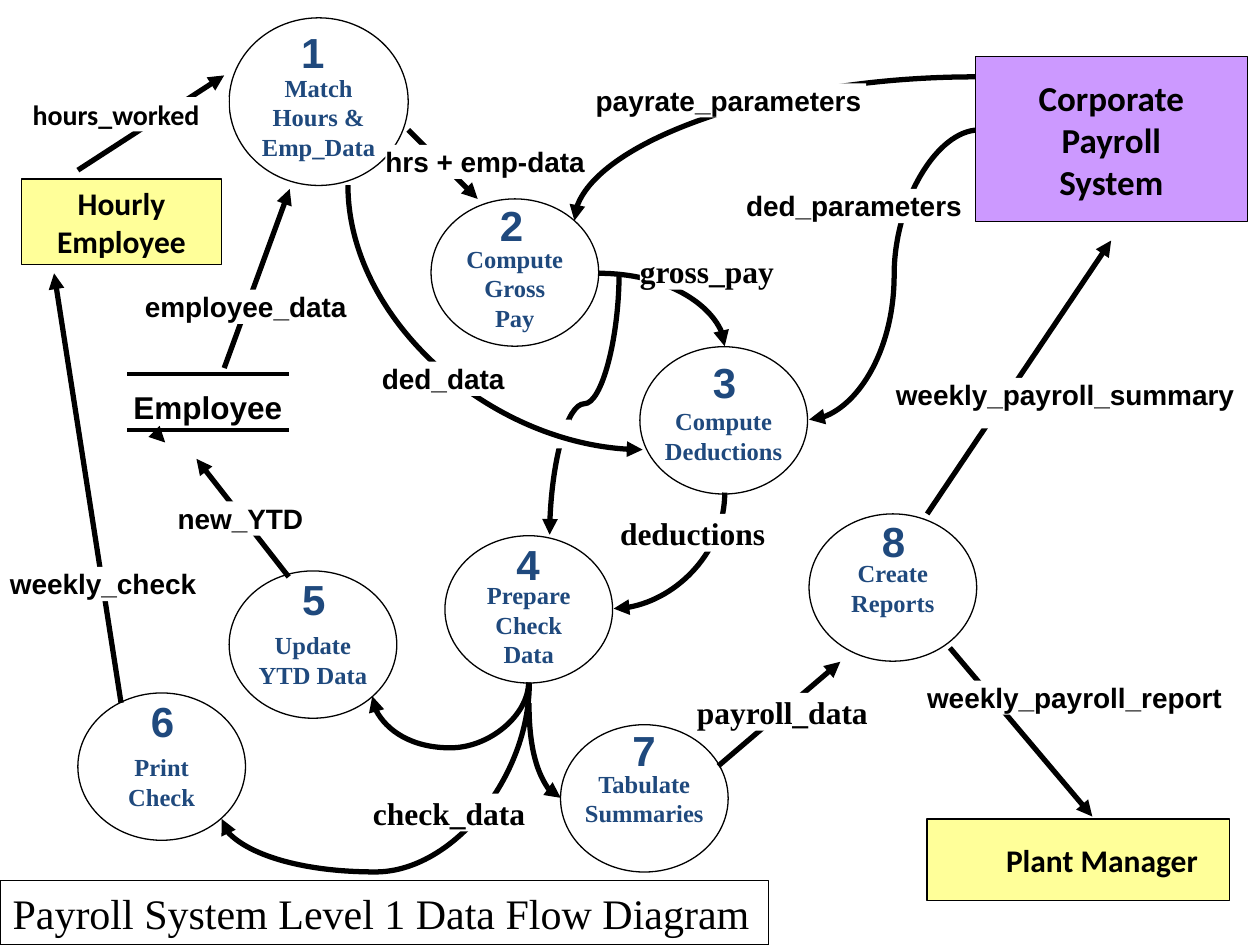
from lxml import etree
from pptx import Presentation
from pptx.dml.color import RGBColor
from pptx.enum.dml import MSO_THEME_COLOR
from pptx.enum.shapes import MSO_CONNECTOR, MSO_SHAPE
from pptx.enum.text import MSO_ANCHOR, MSO_AUTO_SIZE, PP_ALIGN
from pptx.oxml.ns import qn
from pptx.util import Cm, Pt

RECTANGLE, OVAL = MSO_SHAPE.RECTANGLE, MSO_SHAPE.OVAL
STRAIGHT, CURVE = MSO_CONNECTOR.STRAIGHT, MSO_CONNECTOR.CURVE
LEFT, CENTER = PP_ALIGN.LEFT, PP_ALIGN.CENTER
TOP, MIDDLE = MSO_ANCHOR.TOP, MSO_ANCHOR.MIDDLE
FIT, FIXED = MSO_AUTO_SIZE.SHAPE_TO_FIT_TEXT, MSO_AUTO_SIZE.NONE

COLORS = {"ink": "000000", "paper": "FFFFFF", "process": "1F497D",
          "entity": "FFFF99", "system": "CC99FF"}
SANS, SERIF, BODY = "Arial", "Times New Roman", "Calibri"


def style_block(shape, fill=None, outline=False, lines=(), font=SANS, size=16,
                color="ink", bold=True, align=LEFT, **frame_format):
    """Set fill, outline and text; frame_format holds text frame attributes."""
    if fill:
        shape.fill.solid()
        shape.fill.fore_color.rgb = RGBColor.from_string(COLORS[fill])
    if outline:
        shape.line.color.rgb = RGBColor.from_string(COLORS["ink"])
        shape.line.width = Pt(0.75)
    else:
        shape.line.fill.background()
    shape.shadow.inherit = False
    frame = shape.text_frame
    for name, value in {"word_wrap": False, **frame_format}.items():
        setattr(frame, name, value)
    for index, line in enumerate(lines):
        paragraph = frame.add_paragraph() if index else frame.paragraphs[0]
        paragraph.alignment = align
        run = paragraph.add_run()
        run.text = line
        for name, value in {"name": font, "size": Pt(size), "bold": bold}.items():
            setattr(run.font, name, value)
        run.font.color.rgb = RGBColor.from_string(COLORS[color])


def add_line(kind, x1, y1, x2, y2, width=3, arrow=True):
    connector = slide.shapes.add_connector(kind, Cm(x1), Cm(y1), Cm(x2), Cm(y2))
    connector.line.color.rgb = RGBColor.from_string(COLORS["ink"])
    connector.line.width = Pt(width)
    if arrow:
        line = connector.line._get_or_add_ln()
        etree.SubElement(line, qn("a:tailEnd"), type="triangle")
    etree.SubElement(connector._element.spPr, qn("a:effectLst"))
    return connector


presentation = Presentation()
presentation.slide_width, presentation.slide_height = Cm(25.4), Cm(19.05)
slide = presentation.slides.add_slide(presentation.slide_layouts[5])
slide.background.fill.solid()
slide.background.fill.fore_color.theme_color = MSO_THEME_COLOR.BACKGROUND_1

title = slide.shapes.title
title_place = {"left": Cm(0), "top": Cm(17.75), "width": Cm(15.49), "height": Cm(1.3)}
for name, value in title_place.items():
    setattr(title, name, value)
style_block(title, None, True, ["Payroll System Level 1 Data Flow Diagram"],
            SERIF, 24, bold=False, vertical_anchor=MIDDLE, auto_size=FIXED)

# Processes: left, top, width, height, top inset, name lines, number left and top
PROCESSES = [
    (4.62, 0.36, 3.61, 3.38, 0.74, ["Match", "Hours &", "Emp_Data"], 5.82, 0.41),
    (8.69, 4.01, 3.38, 2.97, 0.74, ["Compute", "Gross", "Pay"], 9.83, 3.89),
    (12.9, 6.99, 3.38, 2.97, 0.74, ["Compute", "Deductions"], 14.12, 7.06),
    (8.97, 10.8, 3.38, 2.97, 0.74, ["Prepare", "Check", "Data"], 10.16, 10.74),
    (4.62, 11.51, 3.38, 2.97, 0.74, ["Update", "YTD Data"], 5.84, 11.43),
    (1.57, 13.97, 3.38, 2.97, 0.74, ["Print", "Check"], 2.79, 13.89),
    (11.3, 14.61, 3.38, 2.97, 0.13, ["Tabulate", "Summaries"], 12.5, 14.48),
    (16.31, 10.36, 3.38, 2.97, 0.13, ["Create", "Reports"], 17.53, 10.26),
]
for left, top, width, height, inset, lines, _, _ in PROCESSES:
    circle = slide.shapes.add_shape(OVAL, Cm(left), Cm(top), Cm(width), Cm(height))
    style_block(circle, "paper", True, lines, SERIF, 14, "process", align=CENTER,
                vertical_anchor=MIDDLE, margin_top=Cm(inset))

# The last one is so short that only its arrowhead shows
STRAIGHT_FLOWS = [
    (4.52, 7.42, 5.84, 3.81), (1.57, 3.43, 4.52, 1.52),
    (19.15, 13.06, 22.02, 16.46), (18.69, 10.36, 22.4, 4.85),
    (14.48, 15.44, 16.94, 13.34), (8.23, 2.62, 9.63, 4.01),
    (5.82, 11.63, 3.96, 9.25), (2.44, 14.17, 1.09, 5.51),
    (3.31, 8.9, 3.33, 8.92),
]
for ends in STRAIGHT_FLOWS:
    add_line(STRAIGHT, *ends)

# Curved flows: start and end before rotation, rotation in degrees, bend
# (a bend of None is a quarter turn)
CURVED_FLOWS = [
    (16.31, 8.46, 19.74, 2.62, 180, 0.5),
    (6.2, 12.04, 8.94, 18.24, 90, 1.39),
    (11.94, 14.81, 10.03, 15.45, 270, None),
    (12.32, 9.98, 14.66, 12.22, 90, None),
    (11.58, 4.45, 19.66, 1.55, 180, None),
    (9.14, 7.44, 14.42, 8.84, 90, 0.5),
    (12.07, 5.51, 14.61, 6.98, 0, None),
    (8.94, 12.32, 9.22, 15.47, 90, 4.72),
    (12.65, 3.43, 7.32, 9.37, 270, None),
]
for *ends, rotation, bend in CURVED_FLOWS:
    if ends == [12.65, 3.43, 7.32, 9.37]:
        # The ded_data flow crosses over this break in the flow below it
        gap = slide.shapes.add_shape(RECTANGLE, Cm(11), Cm(8.46), Cm(0.51), Cm(0.58))
        style_block(gap, "paper")
    properties = add_line(CURVE, *ends)._element.spPr
    properties.find(qn("a:xfrm")).set("rot", str(rotation * 60000))
    geometry = properties.find(qn("a:prstGeom"))
    if bend is None:
        geometry.set("prst", "curvedConnector2")
    else:
        guides = geometry.find(qn("a:avLst"))
        etree.SubElement(guides, qn("a:gd"), name="adj1", fmla=f"val {bend * 100000:.0f}")

# External entities: left, top, width, height, fill, size, left inset, lines
ENTITIES = [
    (0.43, 3.61, 4.04, 1.73, "entity", 18, 0.25, ["Hourly", "Employee"]),
    (18.69, 16.51, 6.1, 1.65, "entity", 18, 1.2, ["Plant Manager"]),
    (19.66, 1.14, 5.49, 3.33, "system", 20, 0.25, ["Corporate", "Payroll", "System"]),
]
for left, top, width, height, fill, size, inset, lines in ENTITIES:
    box = slide.shapes.add_shape(RECTANGLE, Cm(left), Cm(top), Cm(width), Cm(height))
    style_block(box, fill, True, lines, BODY, size, align=CENTER,
                vertical_anchor=MIDDLE, margin_left=Cm(inset))

# Flow labels: text, font, size, left, top, width, height, wrap
LABELS = [
    ("employee_data", SANS, 16, 2.92, 5.84, 4.2, 0.69, False),
    ("hours_worked", BODY, 16, 0.66, 1.96, 3.95, 0.69, False),
    ("weekly_payroll_report", SANS, 16, 18.69, 13.72, 6.1, 0.69, False),
    ("weekly_payroll_summary", SANS, 16, 18.06, 7.62, 7.34, 1.02, True),
    ("ded_parameters", SANS, 16, 15.04, 3.81, 4.5, 0.69, False),
    ("payroll_data", SERIF, 18, 14.05, 13.97, 3.55, 0.76, False),
    ("deductions", SERIF, 18, 12.5, 10.36, 3.05, 0.76, False),
    ("payrate_parameters", SANS, 16, 12.01, 1.68, 5.45, 0.69, False),
    ("check_data", SERIF, 18, 7.52, 16, 3.2, 0.76, False),
    ("hrs + emp-data", SANS, 16, 7.77, 2.92, 4.15, 0.69, False),
    ("gross_pay", SERIF, 18, 12.9, 5.08, 2.85, 0.76, False),
    ("ded_data", SANS, 16, 7.7, 7.29, 2.6, 0.69, False),
    ("new_YTD", SANS, 16, 3.58, 10.11, 2.65, 0.69, False),
    ("weekly_check", SANS, 16, 0.2, 11.43, 3.9, 0.69, False),
]
NO_MARGINS = {f"margin_{side}": 0 for side in ("left", "top", "right", "bottom")}
for text, font, size, left, top, width, height, wrap in LABELS:
    label = slide.shapes.add_shape(RECTANGLE, Cm(left), Cm(top), Cm(width), Cm(height))
    style_block(label, "paper", False, [text], font, size, word_wrap=wrap,
                auto_size=FIT, vertical_anchor=TOP, **NO_MARGINS)

for number, (*_, left, top) in enumerate(PROCESSES, start=1):
    box = slide.shapes.add_textbox(Cm(left), Cm(top), Cm(0.99), Cm(1.27))
    style_block(box, lines=[str(number)], size=24, color="process", auto_size=FIT)

# Employee data store
store = slide.shapes.add_textbox(Cm(2.44), Cm(7.7), Cm(3.53), Cm(1.02))
style_block(store, lines=["Employee"], size=18, auto_size=FIT)
for y in (7.54, 8.66):
    add_line(STRAIGHT, 2.57, y, 5.82, y, width=2.25, arrow=False)

presentation.save("out.pptx")
